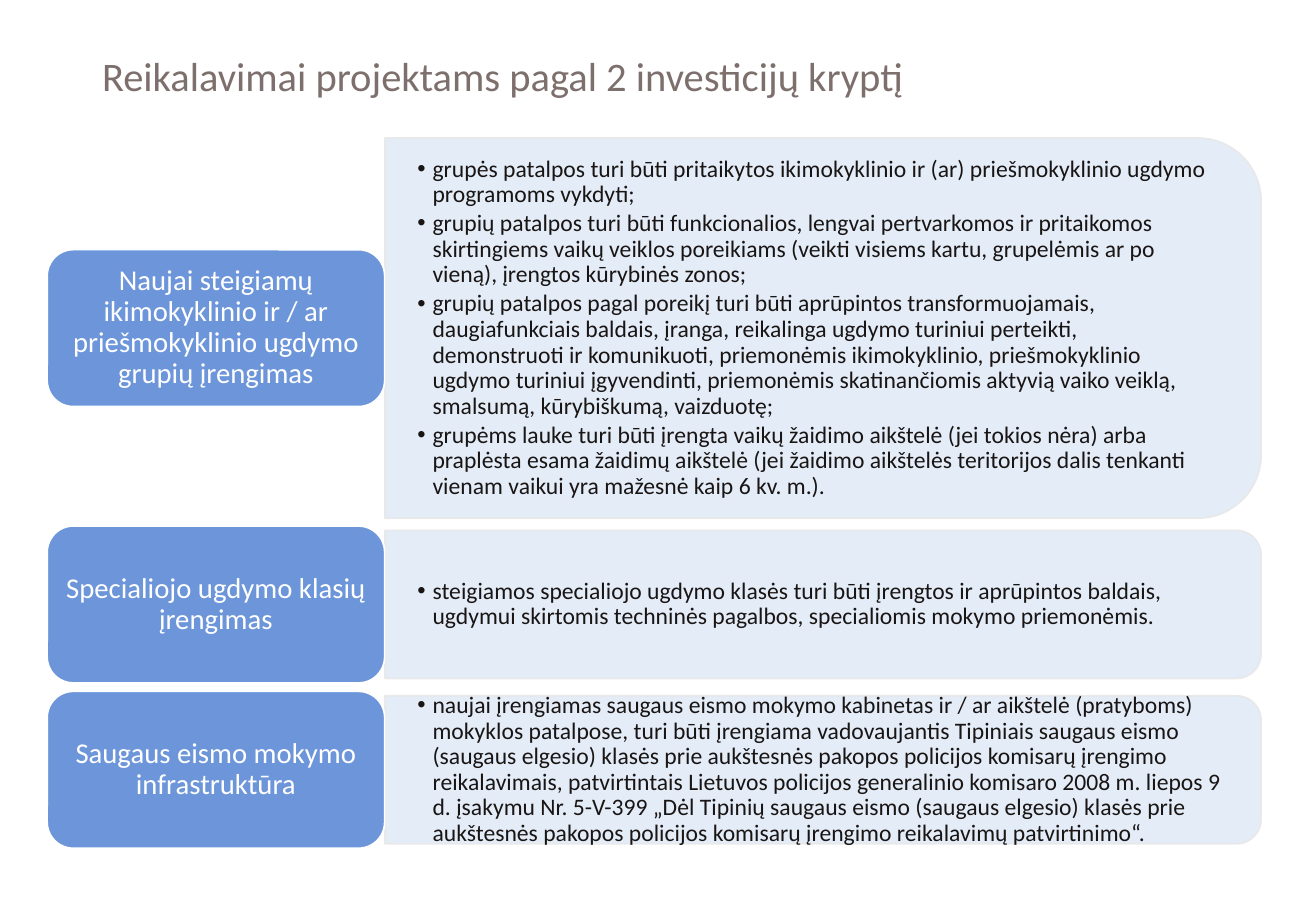
import pptx
import pptx.util
import pptx.dml.color
import pptx.enum.shapes
import pptx.enum.text
import pptx.oxml.ns
import lxml.etree

Pt = pptx.util.Pt
RGBColor = pptx.dml.color.RGBColor
MSO_SHAPE = pptx.enum.shapes.MSO_SHAPE
PP_ALIGN = pptx.enum.text.PP_ALIGN
qn = pptx.oxml.ns.qn

TITLE_GREY = RGBColor(0x7D, 0x6F, 0x6C)
TEXT_DARK = RGBColor(0x19, 0x15, 0x14)
PANEL_BLUE = RGBColor(0xE2, 0xEA, 0xF7)
PANEL_EDGE = RGBColor(0xE8, 0xE8, 0xE8)
LABEL_BLUE = RGBColor(0x6D, 0x96, 0xDA)
WHITE = RGBColor(0xFF, 0xFF, 0xFF)

LABEL_LEFT, LABEL_WIDTH, LABEL_HEIGHT = 28, 200, 93
PANEL_LEFT, PANEL_WIDTH = 228.2, 519.3
CORNER_RATIO = 1 / 6
CORNER_INSET = 0.29

TITLE = "Reikalavimai projektams pagal 2 investicijų kryptį"
ROWS = [
    (194.5, 225.4, "Naujai steigiamų ikimokyklinio ir / ar priešmokyklinio ugdymo grupių įrengimas", [
        "grupės patalpos turi būti pritaikytos ikimokyklinio ir (ar) priešmokyklinio ugdymo "
        "programoms vykdyti;",
        "grupių patalpos turi būti funkcionalios, lengvai pertvarkomos ir pritaikomos skirtingiems "
        "vaikų veiklos poreikiams (veikti visiems kartu, grupelėmis ar po vieną), įrengtos "
        "kūrybinės zonos;",
        "grupių patalpos pagal poreikį turi būti aprūpintos transformuojamais, daugiafunkciais "
        "baldais, įranga, reikalinga ugdymo turiniui perteikti, demonstruoti ir komunikuoti, "
        "priemonėmis ikimokyklinio, priešmokyklinio ugdymo turiniui įgyvendinti, priemonėmis "
        "skatinančiomis aktyvią vaiko veiklą, smalsumą, kūrybiškumą, vaizduotę;",
        "grupėms lauke turi būti įrengta vaikų žaidimo aikštelė (jei tokios nėra) arba praplėsta "
        "esama žaidimų aikštelė (jei žaidimo aikštelės teritorijos dalis tenkanti vienam vaikui "
        "yra mažesnė kaip 6 kv. m.).",
    ]),
    (358.3, 87.8, "Specialiojo ugdymo klasių įrengimas", [
        "steigiamos specialiojo ugdymo klasės turi būti įrengtos ir aprūpintos baldais, ugdymui "
        "skirtomis techninės pagalbos, specialiomis mokymo priemonėmis.",
    ]),
    (456.3, 87.8, "Saugaus eismo mokymo infrastruktūra", [
        "naujai įrengiamas saugaus eismo mokymo kabinetas ir / ar aikštelė (pratyboms) mokyklos "
        "patalpose, turi būti įrengiama vadovaujantis Tipiniais saugaus eismo (saugaus elgesio) "
        "klasės prie aukštesnės pakopos policijos komisarų įrengimo reikalavimais, patvirtintais "
        "Lietuvos policijos generalinio komisaro 2008 m. liepos 9 d. įsakymu Nr. 5-V-399 „Dėl "
        "Tipinių saugaus eismo (saugaus elgesio) klasės prie aukštesnės pakopos policijos "
        "komisarų įrengimo reikalavimų patvirtinimo“.",
    ]),
]


class SlideBuilder:
    font = "Calibri"

    def __init__(self, slide):
        self.slide = slide

    def place(self, sp, left, top, width, height):
        sp.left, sp.top, sp.width, sp.height = Pt(left), Pt(top), Pt(width), Pt(height)

    def frame(self, sp, inset_x, inset_y):
        tf = sp.text_frame
        tf.word_wrap = True
        tf.auto_size = pptx.enum.text.MSO_AUTO_SIZE.NONE
        tf.vertical_anchor = pptx.enum.text.MSO_ANCHOR.MIDDLE
        tf.margin_left = tf.margin_right = Pt(inset_x)
        tf.margin_top = tf.margin_bottom = Pt(inset_y)
        return tf

    def add_text(self, p, text, size, color, align, after=0):
        p.alignment = align
        p.line_spacing = 0.9
        p.space_before = Pt(0)
        p.space_after = Pt(after)
        r = p.add_run()
        r.text = text
        r.font.name = self.font
        r.font.size = Pt(size)
        r.font.bold = False
        r.font.color.rgb = color

    def shape(self, kind, box, fill, line):
        sp = self.slide.shapes.add_shape(kind, *map(Pt, box))
        sp.shadow.inherit = False
        sp.fill.solid()
        sp.fill.fore_color.rgb = fill
        sp.line.color.rgb = line
        sp.line.width = Pt(1)
        return sp

    def title(self, text):
        sp = self.slide.shapes.title
        self.place(sp, 53.3, 25.2, 672.5, 42.5)
        p = self.frame(sp, 7.2, 3.6).paragraphs[0]
        self.add_text(p, text, 24, TITLE_GREY, PP_ALIGN.LEFT)

    def panel(self, middle, height):
        center = PANEL_LEFT + PANEL_WIDTH / 2
        box = (center - height / 2, middle - PANEL_WIDTH / 2, height, PANEL_WIDTH)
        sp = self.shape(MSO_SHAPE.ROUND_2_SAME_RECTANGLE, box, PANEL_BLUE, PANEL_EDGE)
        sp.rotation = 90
        for color in sp._element.spPr.iter(qn("a:srgbClr")):
            lxml.etree.SubElement(color, qn("a:alpha"), val="90000")

    def bullets(self, sp, middle, height, items):
        inset = height * CORNER_RATIO * CORNER_INSET
        text_height = height - 2 * inset
        self.place(sp, PANEL_LEFT, middle - text_height / 2, PANEL_WIDTH - inset, text_height)
        self.slide.shapes._spTree.append(sp._element)
        tf = self.frame(sp, 19.2, 9.6)
        for i, text in enumerate(items):
            p = tf.add_paragraph() if i else tf.paragraphs[0]
            p.level = 1
            pPr = p._p.get_or_add_pPr()
            pPr.set("marL", str(Pt(9)))
            pPr.set("indent", str(Pt(-9)))
            lxml.etree.SubElement(pPr, qn("a:buFont"), typeface="Arial")
            lxml.etree.SubElement(pPr, qn("a:buChar"), char="•")
            self.add_text(p, text, 14, TEXT_DARK, PP_ALIGN.LEFT, after=2.1)

    def label(self, middle, text):
        box = (LABEL_LEFT, middle - LABEL_HEIGHT / 2, LABEL_WIDTH, LABEL_HEIGHT)
        sp = self.shape(MSO_SHAPE.ROUNDED_RECTANGLE, box, LABEL_BLUE, WHITE)
        p = self.frame(sp, 5.1, 2.6).paragraphs[0]
        self.add_text(p, text, 17, WHITE, PP_ALIGN.CENTER, after=5.95)


def main():
    prs = pptx.Presentation()
    prs.slide_width, prs.slide_height = Pt(780), Pt(540)
    s = prs.slides.add_slide(prs.slide_layouts.get_by_name("Comparison"))
    builder = SlideBuilder(s)
    builder.title(TITLE)
    bodies = [sp for sp in s.placeholders if 1 <= sp.placeholder_format.idx <= 4]
    for body, (middle, height, label, items) in zip(bodies, ROWS):
        builder.panel(middle, height)
        builder.bullets(body, middle, height, items)
        builder.label(middle, label)
    for spare in bodies[len(ROWS):]:
        spare._element.getparent().remove(spare._element)
    prs.save("out.pptx")


if __name__ == "__main__":
    main()
